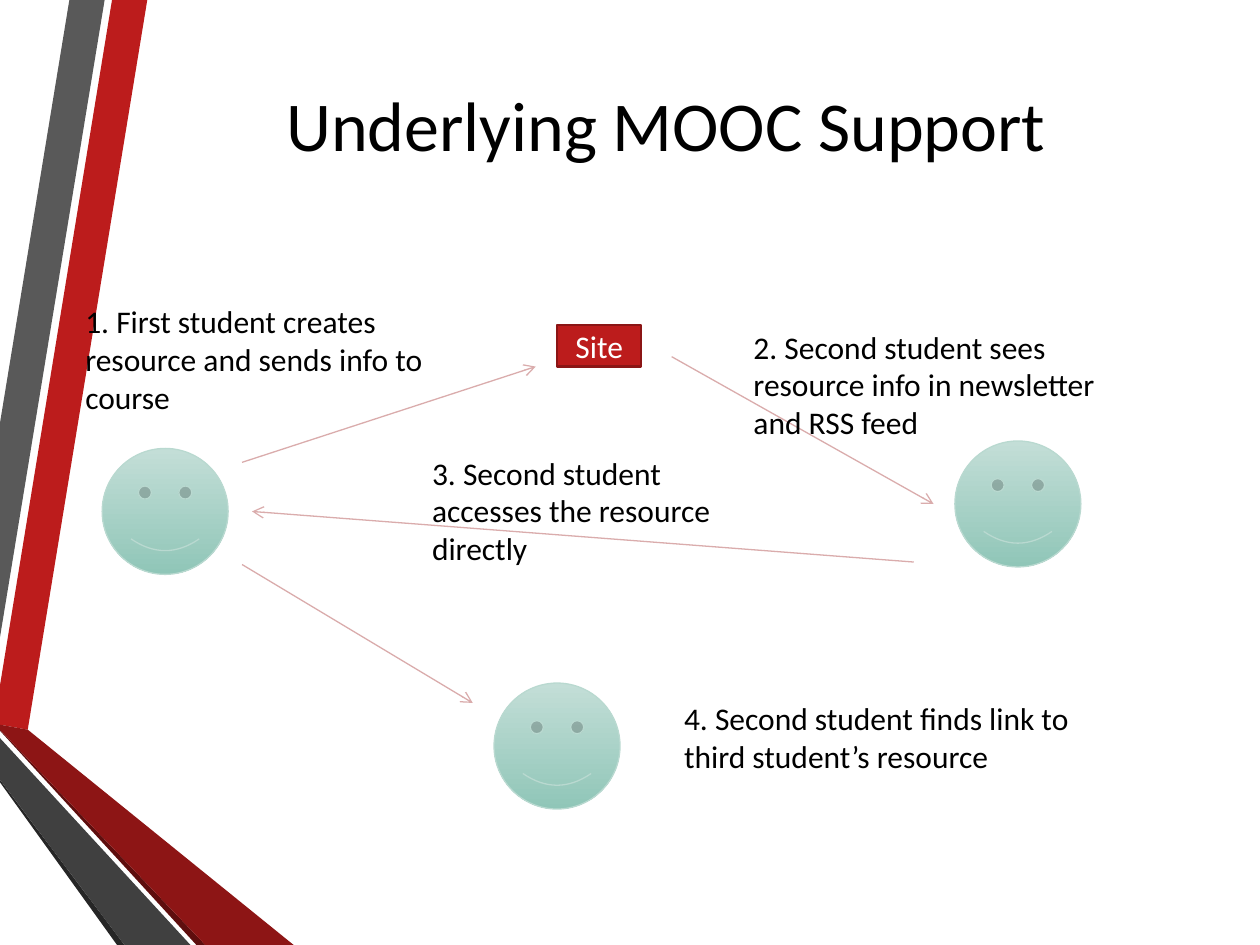
import pptx
import pptx.util
import pptx.dml.color
import pptx.enum.shapes
import pptx.enum.text
import pptx.oxml
import pptx.oxml.ns

Cm, Pt = pptx.util.Cm, pptx.util.Pt
RGBColor = pptx.dml.color.RGBColor
Shape = pptx.enum.shapes.MSO_SHAPE
Align = pptx.enum.text.PP_ALIGN
Anchor = pptx.enum.text.MSO_ANCHOR

WIDE, HIGH = 25.4, 19.05
FACE = 2.54
BLACK = RGBColor(0x00, 0x00, 0x00)
WHITE = RGBColor(0xFF, 0xFF, 0xFF)
RED = RGBColor(0xBC, 0x1C, 0x1C)
EDGE = RGBColor(0x8B, 0x15, 0x15)
GREY = RGBColor(0x59, 0x59, 0x59)
COAL = RGBColor(0x40, 0x40, 0x40)
SOOT = RGBColor(0x26, 0x26, 0x26)
WINE = RGBColor(0x8D, 0x15, 0x15)
DARK = RGBColor(0x5E, 0x0E, 0x0E)
PINK = RGBColor(0xDA, 0xAC, 0xAC)
MINT = RGBColor(0xC3, 0xDE, 0xD7)
TEAL = RGBColor(0x90, 0xC6, 0xB8)
RIM = RGBColor(0xB9, 0xD9, 0xD0)

BANDS = [
    (RED, [(0, 13.82), (0, 14.61), (0.56, 14.71), (2.97, 0), (2.26, 0)]),
    (GREY, [(2.11, 0), (1.4, 0), (0, 8.53), (0, 12.85)]),
    (SOOT, [(0, 15.72), (0, 15.77), (2.36, HIGH), (2.51, HIGH)]),
    (DARK, [(0, 14.71), (0, 14.73), (3.96, HIGH), (4.14, HIGH)]),
    (WINE, [(0, 14.71), (4.14, HIGH), (5.92, HIGH), (0.56, 14.71), (0, 14.61)]),
    (COAL, [(0, 15.72), (2.51, HIGH), (3.84, HIGH), (0, 14.88)]),
]
TITLE = ("Underlying MOOC Support", (2.72, 1.27, 21.41, 2.44))
SITE = ("Site", (11.23, 6.55, 1.7, 0.84))
FACES = [(2.06, 9.04), (19.25, 8.89), (9.96, 13.77)]
ARROWS = [
    ((4.88, 9.32), (10.8, 7.39)),
    ((13.54, 7.19), (18.82, 10.16)),
    ((18.42, 11.33), (5.08, 10.31)),
    ((4.88, 11.38), (9.53, 14.17)),
]
STEPS = [
    ("1. First student creates resource and sends info to course",
     (1.47, 5.97, 7.62, 2.57)),
    ("2. Second student sees resource info in newsletter and RSS feed",
     (14.94, 6.48, 7.92, 2.57)),
    ("3. Second student accesses the resource directly",
     (8.46, 9.02, 6.17, 2.57)),
    ("4. Second student finds link to third student’s resource",
     (13.54, 13.97, 8.46, 1.8)),
]


def cms(nums):
    return [Cm(num) for num in nums]


def write(shape, text, size, color, align=Align.LEFT, anchor=Anchor.TOP):
    frame = shape.text_frame
    frame.word_wrap = True
    frame.vertical_anchor = anchor
    para = frame.paragraphs[0]
    para.alignment = align
    run = para.add_run()
    run.text = text
    run.font.name = "Calibri"
    run.font.size = Pt(size)
    run.font.color.rgb = color


def add_band(shapes, color, spots):
    first, *rest = [cms(spot) for spot in spots]
    pen = shapes.build_freeform(*first)
    pen.add_line_segments(rest, close=True)
    band = pen.convert_to_shape()
    band.shadow.inherit = False
    band.fill.solid()
    band.fill.fore_color.rgb = color
    band.line.fill.background()


def add_face(shapes, spot):
    face = shapes.add_shape(Shape.SMILEY_FACE, *cms((*spot, FACE, FACE)))
    face.shadow.inherit = False
    face.fill.gradient()
    face.fill.gradient_angle = 270
    for stop, color, place in zip(face.fill.gradient_stops, (MINT, TEAL), (0, 1)):
        stop.color.rgb = color
        stop.position = place
    face.line.color.rgb = RIM
    face.line.width = Pt(0.75)


def add_arrow(shapes, start, end):
    kind = pptx.enum.shapes.MSO_CONNECTOR.STRAIGHT
    arrow = shapes.add_connector(kind, *cms(start + end))
    arrow.line.color.rgb = PINK
    arrow.line.width = Pt(0.75)
    line = arrow.line._get_or_add_ln()
    tip = pptx.oxml.parse_xml(
        f'<a:tailEnd {pptx.oxml.ns.nsdecls("a")} type="arrow"/>')
    line.append(tip)
    flat = pptx.oxml.parse_xml(f'<a:effectLst {pptx.oxml.ns.nsdecls("a")}/>')
    line.addnext(flat)


def add_site(shapes, text, box):
    site = shapes.add_shape(Shape.RECTANGLE, *cms(box))
    site.shadow.inherit = False
    site.fill.solid()
    site.fill.fore_color.rgb = RED
    site.line.color.rgb = EDGE
    site.line.width = Pt(1.25)
    write(site, text, 18, WHITE, Align.CENTER, Anchor.MIDDLE)


def main():
    deck = pptx.Presentation()
    deck.slide_width, deck.slide_height = cms((WIDE, HIGH))
    shapes = deck.slides.add_slide(deck.slide_layouts[6]).shapes
    for color, spots in BANDS:
        add_band(shapes, color, spots)
    text, box = TITLE
    write(shapes.add_textbox(*cms(box)), text, 40, BLACK,
          Align.CENTER, Anchor.MIDDLE)
    for spot in FACES:
        add_face(shapes, spot)
    add_site(shapes, *SITE)
    for start, end in ARROWS:
        add_arrow(shapes, start, end)
    for text, box in STEPS:
        write(shapes.add_textbox(*cms(box)), text, 18, BLACK)
    deck.save("out.pptx")


if __name__ == "__main__":
    main()
